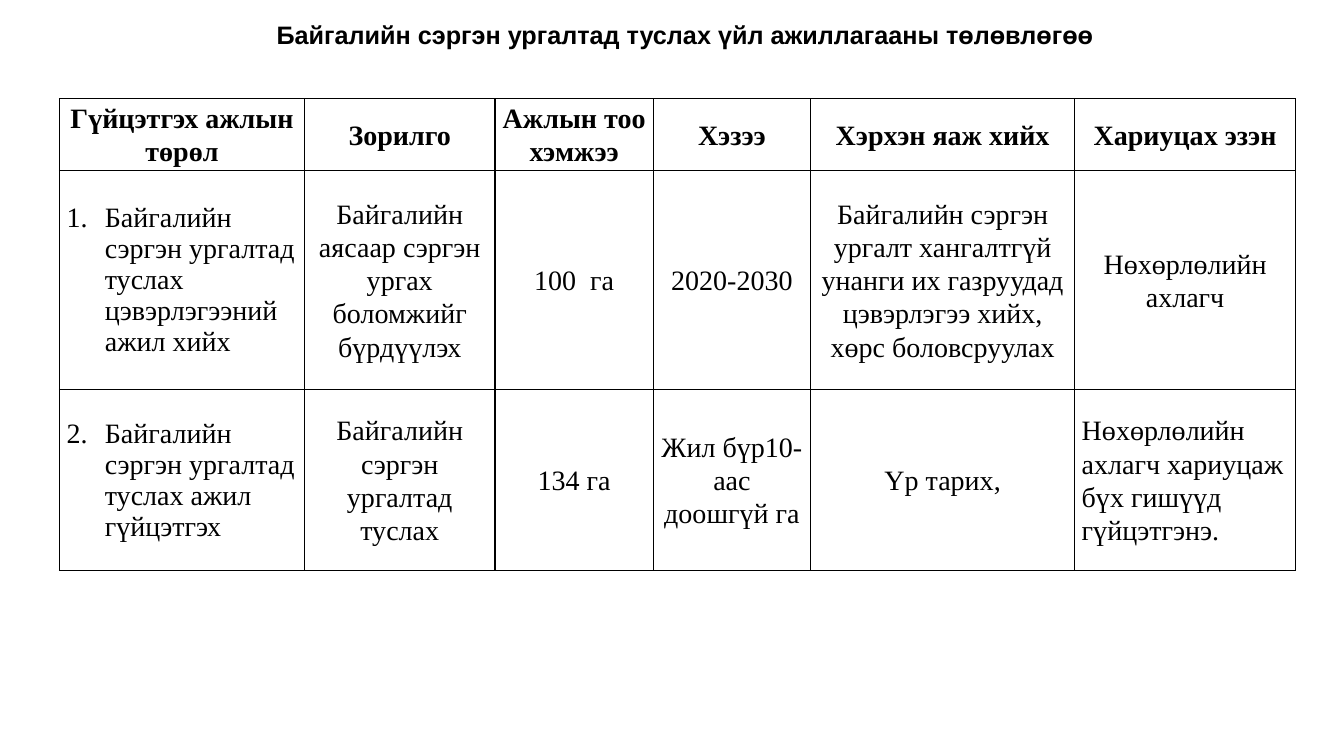
from lxml.etree import SubElement
from pptx import Presentation
from pptx.dml.color import RGBColor
from pptx.enum.text import MSO_ANCHOR, MSO_AUTO_SIZE, PP_ALIGN
from pptx.oxml import parse_xml
from pptx.oxml.ns import nsdecls, qn
from pptx.util import Inches, Pt

TITLE = "Байгалийн сэргэн ургалтад туслах үйл ажиллагааны төлөвлөгөө"
HEADER = ["Гүйцэтгэх ажлын төрөл", "Зорилго", "Ажлын тоо хэмжээ", "Хэзээ",
          "Хэрхэн яаж хийх", "Хариуцах эзэн"]
TASKS = [
    ["Байгалийн сэргэн ургалтад туслах цэвэрлэгээний ажил хийх",
     "Байгалийн аясаар сэргэн ургах боломжийг бүрдүүлэх",
     "100  га",
     "2020-2030",
     "Байгалийн сэргэн ургалт хангалтгүй унанги их газруудад цэвэрлэгээ хийх, хөрс боловсруулах",
     "Нөхөрлөлийн ахлагч"],
    ["Байгалийн сэргэн ургалтад туслах ажил гүйцэтгэх",
     "Байгалийн сэргэн ургалтад туслах",
     "134 га",
     "Жил бүр10-аас доошгүй га",
     "Үр тарих,",
     "Нөхөрлөлийн ахлагч хариуцаж бүх гишүүд гүйцэтгэнэ."],
]
LEFT_ALIGNED = {(2, 5)}

COLUMN_WIDTHS = [2.43, 1.89, 1.57, 1.56, 2.62, 2.19]
ROW_HEIGHTS = [0.71, 2.17, 1.8]
LINE_SPACING = 1.07
BLACK = RGBColor(0, 0, 0)
WHITE = RGBColor(255, 255, 255)


def style_font(para, name, size, bold):
    para.font.name = name
    para.font.size = Pt(size)
    para.font.bold = bold
    para.font.color.rgb = BLACK


def number_paragraph(para, number):
    """Give the paragraph an automatic number with a hanging indent."""
    properties = para._p.get_or_add_pPr()
    properties.set("marL", str(Inches(0.38)))
    properties.set("indent", str(-Inches(0.38)))
    SubElement(properties, qn("a:buAutoNum"), type="arabicPeriod", startAt=str(number))


def add_borders(cell):
    properties = cell._tc.get_or_add_tcPr()
    for position, side in enumerate("LRTB"):
        properties.insert(position, parse_xml(
            f'<a:ln{side} {nsdecls("a")} w="{Pt(1)}"><a:solidFill>'
            f'<a:srgbClr val="{BLACK}"/></a:solidFill></a:ln{side}>'))


def add_title(page):
    box = page.shapes.add_textbox(Inches(0.32), Inches(0.12), Inches(12.7), Inches(0.41))
    frame = box.text_frame
    frame.word_wrap = True
    frame.auto_size = MSO_AUTO_SIZE.SHAPE_TO_FIT_TEXT
    para = frame.paragraphs[0]
    para.text = TITLE
    para.alignment = PP_ALIGN.CENTER
    para.line_spacing = LINE_SPACING
    para._p.get_or_add_pPr().set("indent", str(Inches(0.25)))
    style_font(para, "Arial", 18, True)


def fill_cell(cell, text, row, column):
    cell.fill.solid()
    cell.fill.fore_color.rgb = WHITE
    add_borders(cell)
    cell.vertical_anchor = MSO_ANCHOR.MIDDLE
    cell.margin_left = cell.margin_right = Inches(0.07)
    cell.margin_top = cell.margin_bottom = 0
    para = cell.text_frame.paragraphs[0]
    para.text = text
    if row > 0 and column == 0:
        number_paragraph(para, row)
    else:
        para.line_spacing = LINE_SPACING
        para.alignment = PP_ALIGN.LEFT if (row, column) in LEFT_ALIGNED else PP_ALIGN.CENTER
    style_font(para, "Times New Roman", 20, row == 0)


def add_plan_table(page):
    rows = [HEADER, *TASKS]
    table = page.shapes.add_table(
        len(rows), len(HEADER), Inches(0.59), Inches(0.98),
        Inches(sum(COLUMN_WIDTHS)), Inches(sum(ROW_HEIGHTS))).table
    table.horz_banding = False
    for column, width in zip(table.columns, COLUMN_WIDTHS):
        column.width = Inches(width)
    for row, height in zip(table.rows, ROW_HEIGHTS):
        row.height = Inches(height)
    for row, texts in enumerate(rows):
        for column, text in enumerate(texts):
            fill_cell(table.cell(row, column), text, row, column)


def main():
    deck = Presentation()
    deck.slide_width, deck.slide_height = Inches(13.33), Inches(7.5)
    page = deck.slides.add_slide(deck.slide_layouts[6])
    add_title(page)
    add_plan_table(page)
    deck.save("out.pptx")


if __name__ == "__main__":
    main()
